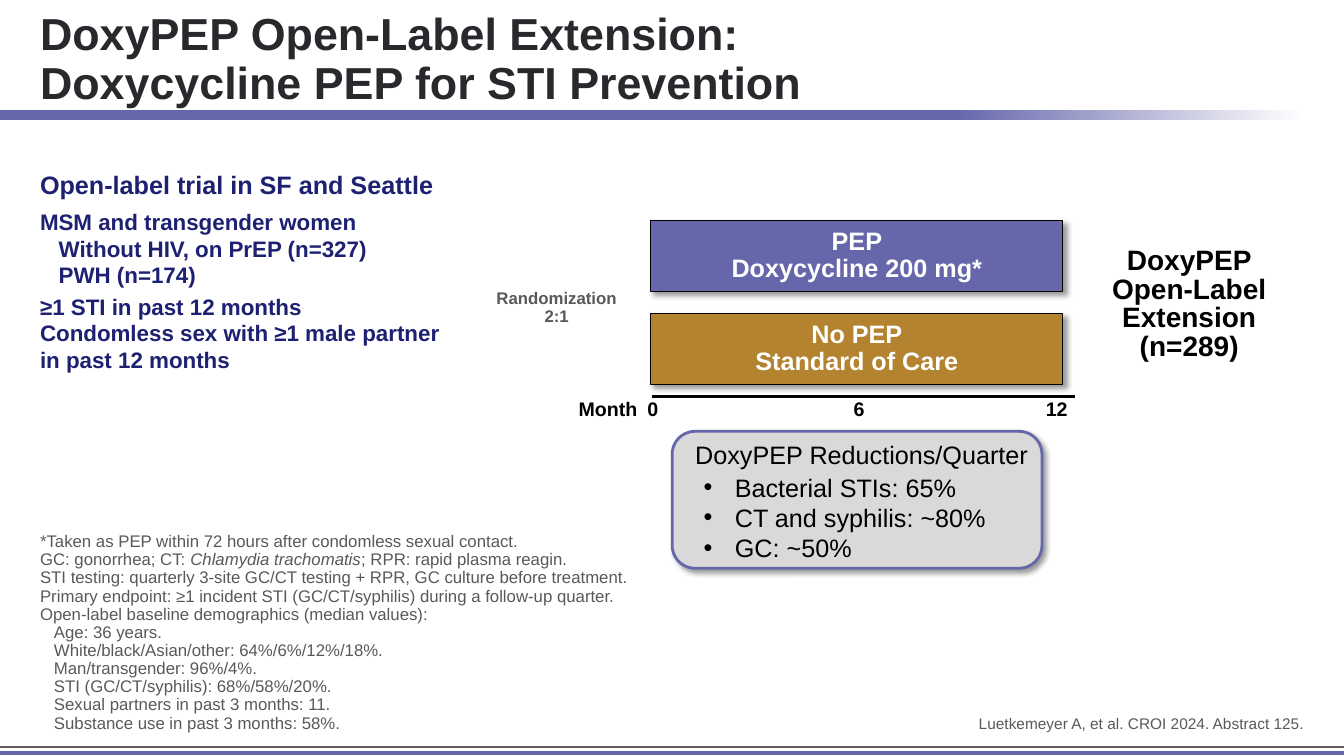
import pptx
import pptx.dml.color
import pptx.enum.shapes
import pptx.enum.text
import pptx.oxml
import pptx.oxml.ns
import pptx.util
from lxml import etree

Cm = pptx.util.Cm
Pt = pptx.util.Pt
RGBColor = pptx.dml.color.RGBColor
Align = pptx.enum.text.PP_ALIGN
Anchor = pptx.enum.text.MSO_ANCHOR
Shape = pptx.enum.shapes.MSO_SHAPE
qn = pptx.oxml.ns.qn

WHITE = RGBColor(0xFF, 0xFF, 0xFF)
BLACK = RGBColor(0x00, 0x00, 0x00)
INK = RGBColor(0x29, 0x28, 0x2D)
NAVY = RGBColor(0x1E, 0x21, 0x71)
PURPLE = RGBColor(0x66, 0x67, 0xAB)
OCHRE = RGBColor(0xB3, 0x83, 0x2F)
GREY = RGBColor(0x59, 0x59, 0x59)
SILVER = RGBColor(0xD9, 0xD9, 0xD9)
TAUPE = RGBColor(0x62, 0x5C, 0x60)

WIDE, HIGH = 33.87, 19.05
SHADE = (
    '<a:effectLst xmlns:a="http://schemas.openxmlformats.org/drawingml/2006/main">'
    '<a:outerShdw blurRad="50800" dist="38100" dir="2700000" algn="tl" rotWithShape="0">'
    '<a:srgbClr val="000000"><a:alpha val="40000"/></a:srgbClr>'
    '</a:outerShdw></a:effectLst>'
)


def style(frame, size, color, bold=False, align=Align.LEFT, pitch=1.0):
    for para in frame.paragraphs:
        para.alignment = align
        para.line_spacing = pitch
        for run in para.runs:
            run.font.name = "Arial"
            run.font.size = Pt(size)
            run.font.bold = bold
            run.font.color.rgb = color


def write(slide, box, text, *look, wrap=True, inset=None, **more):
    frame = slide.shapes.add_textbox(*map(Cm, box)).text_frame
    frame.word_wrap = wrap
    if inset is not None:
        frame.margin_left = frame.margin_right = Cm(inset)
        frame.margin_top = frame.margin_bottom = Cm(inset)
    frame.text = text
    style(frame, *look, **more)
    return frame


def indent(para, left, hang=0):
    props = para._p.get_or_add_pPr()
    props.set("marL", str(Cm(left)))
    props.set("indent", str(-Cm(hang)))
    return props


def panel(slide, kind, box, fill, line, width):
    shape = slide.shapes.add_shape(kind, *map(Cm, box))
    shape.fill.solid()
    shape.fill.fore_color.rgb = fill
    shape.line.color.rgb = line
    shape.line.width = Pt(width)
    shape._element.spPr.append(pptx.oxml.parse_xml(SHADE))
    return shape


def rule(slide, left, top, width, color, weight):
    line = slide.shapes.add_connector(
        pptx.enum.shapes.MSO_CONNECTOR.STRAIGHT,
        Cm(left), Cm(top), Cm(left + width), Cm(top))
    line.line.color.rgb = color
    line.line.width = Pt(weight)
    etree.SubElement(line._element.spPr, qn("a:effectLst"))


def header(slide, box):
    left, top, width, height = box
    bar = slide.shapes.add_shape(
        Shape.RECTANGLE, Cm(left), Cm(top + height - 0.25), Cm(width), Cm(0.25))
    bar.shadow.inherit = False
    bar.line.fill.background()
    bar.fill.gradient()
    bar.fill.gradient_angle = 180
    for stop, color, place in zip(bar.fill.gradient_stops, (WHITE, PURPLE), (0.03, 0.29)):
        stop.color.rgb = color
        stop.position = place
    title = write(slide, (left + 0.76, top + 0.53, width - 1.31, 2.34),
                  "DoxyPEP Open-Label Extension:\vDoxycycline PEP for STI Prevention",
                  32, INK, True, pitch=0.9)
    title.vertical_anchor = Anchor.BOTTOM


def footer(slide, box):
    left, top, width, height = box
    rule(slide, left, top, width, TAUPE, 1.75)
    rule(slide, left, top + height, width, PURPLE, 3.25)


def cohort(slide, box):
    frame = write(slide, box, "\n".join((
        "Open-label trial in SF and Seattle",
        "MSM and transgender women",
        "Without HIV, on PrEP (n=327)",
        "PWH (n=174)",
        "≥1 STI in past 12 months",
        "Condomless sex with ≥1 male partner in past 12 months",
    )), 16, NAVY, True)
    paras = frame.paragraphs
    paras[0].runs[0].font.size = Pt(18)
    paras[0].space_after = paras[1].space_before = paras[3].space_after = Pt(3)
    for para in paras[2:4]:
        indent(para, 0.47)


def arms(slide, box):
    left, top, width, height = box
    tall = 1.78
    for name, fill, y in (
            ("PEP\nDoxycycline 200 mg*", PURPLE, top),
            ("No PEP\nStandard of Care", OCHRE, top + height - tall)):
        shape = panel(slide, Shape.RECTANGLE, (left, y, width, tall), fill, BLACK, 0.75)
        frame = shape.text_frame
        frame.text = name
        frame.vertical_anchor = Anchor.MIDDLE
        style(frame, 18, WHITE, True, Align.CENTER, 0.9)


def axis(slide, box):
    left, top, width, height = box
    lead = 2.1
    rule(slide, left, top, width, BLACK, 2)
    frame = write(slide, (left - lead, top - 0.05, width + lead + 1, height),
                  "Month\t0\t6\t12", 14, BLACK, True, pitch=0.9)
    props = frame.paragraphs[0]._p.get_or_add_pPr()
    tabs = etree.SubElement(props, qn("a:tabLst"))
    for place in (0.02, 5.22, 10.2):
        etree.SubElement(tabs, qn("a:tab"), pos=str(Cm(place + lead - 0.25)), algn="ctr")


def effect(slide, box):
    left, top, width, height = box
    shape = panel(slide, Shape.ROUNDED_RECTANGLE, box, SILVER, PURPLE, 2)
    write(slide, (left - 0.56, top + 0.08, width + 1.35, 1.02),
          "DoxyPEP Reductions/Quarter", 18, BLACK, align=Align.CENTER, inset=0.13)
    frame = write(slide, (left + 0.66, top + 0.89, width - 0.33, height - 0.88),
                  "Bacterial STIs: 65%\nCT and syphilis: ~80%\nGC: ~50%",
                  18, BLACK, inset=0.13)
    for para in frame.paragraphs:
        props = indent(para, 0.79, 0.79)
        etree.SubElement(props, qn("a:buFont"), typeface="Arial")
        etree.SubElement(props, qn("a:buChar"), char="•")


def notes(slide, box):
    look = (12, GREY, False, Align.LEFT, 0.9)
    frame = write(slide, box, "\n".join((
        "*Taken as PEP within 72 hours after condomless sexual contact.",
        "GC: gonorrhea; CT: ",
        "STI testing: quarterly 3-site GC/CT testing + RPR, GC culture before treatment.",
        "Primary endpoint: ≥1 incident STI (GC/CT/syphilis) during a follow-up quarter.",
        "Open-label baseline demographics (median values):",
        "Age: 36 years.",
        "White/black/Asian/other: 64%/6%/12%/18%.",
        "Man/transgender: 96%/4%.",
        "STI (GC/CT/syphilis): 68%/58%/20%.",
        "Sexual partners in past 3 months: 11.",
        "Substance use in past 3 months: 58%.",
    )), *look)
    for part in ("Chlamydia trachomatis", "; RPR: rapid plasma reagin."):
        frame.paragraphs[1].add_run().text = part
    style(frame, *look)
    frame.paragraphs[1].runs[1].font.italic = True
    for para in frame.paragraphs[5:]:
        indent(para, 0.35)


def main():
    deck = pptx.Presentation()
    deck.slide_width, deck.slide_height = Cm(WIDE), Cm(HIGH)
    slide = deck.slides.add_slide(deck.slide_layouts[6])
    header(slide, (0, 0, WIDE, 3.02))
    footer(slide, (0, 18.82, WIDE, 0.15))
    cohort(slide, (0.76, 4.14, 10.9, 5.56))
    write(slide, (12.24, 7.19, 3.58, 1.17), "Randomization\n2:1",
          12, GREY, True, Align.CENTER, 0.9, wrap=False)
    arms(slide, (16.4, 5.56, 10.39, 4.12))
    axis(slide, (16.43, 10, 10.67, 0.79))
    write(slide, (26.82, 6.12, 6.3, 3.18), "DoxyPEP\nOpen-Label\nExtension\n(n=289)",
          20, BLACK, True, Align.CENTER, 0.85)
    effect(slide, (16.94, 10.87, 9.32, 3.45))
    notes(slide, (0.76, 13.31, 20.32, 5.33))
    write(slide, (21.54, 17.93, 11.58, 0.69),
          "Luetkemeyer A, et al. CROI 2024. Abstract 125.",
          11, GREY, False, Align.RIGHT, 0.9)
    deck.save("out.pptx")


if __name__ == "__main__":
    main()
